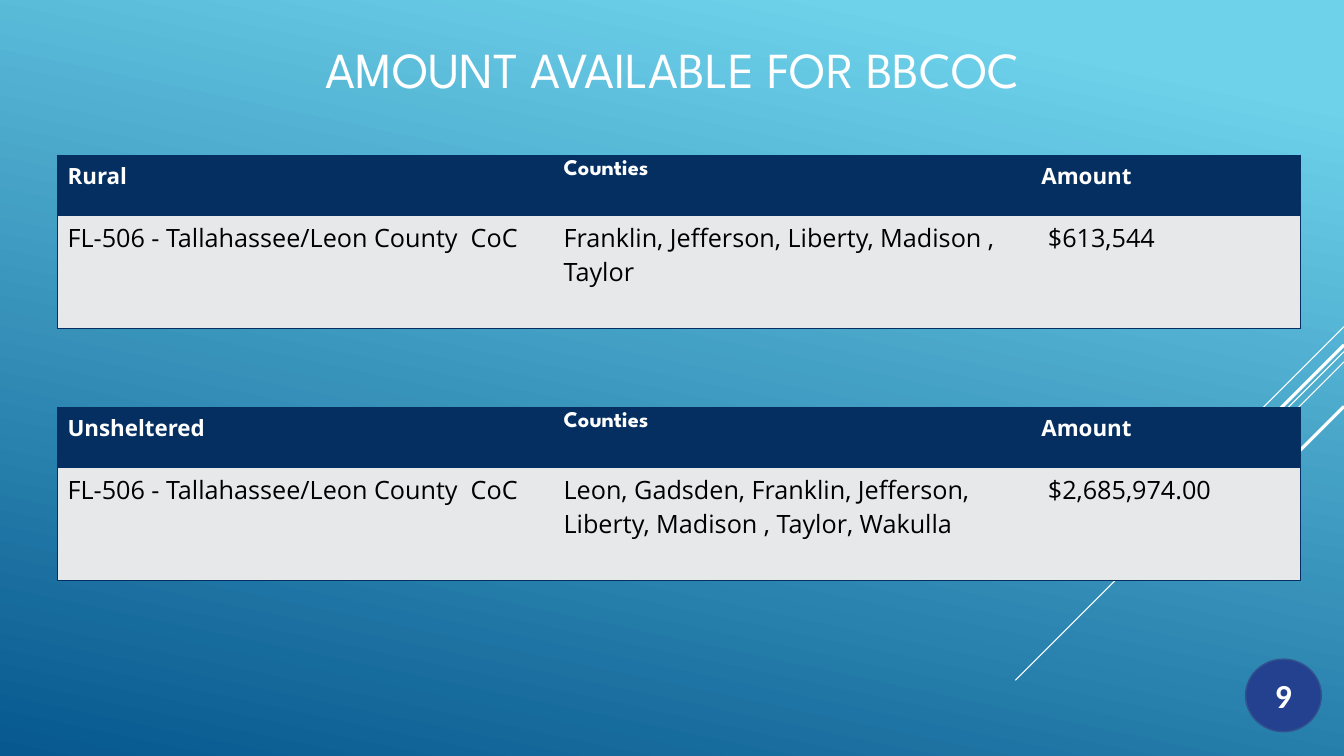
"""Build the slide of funding amounts available for BBCOC."""
import pptx
import pptx.dml.color
import pptx.enum.shapes
import pptx.enum.text
import pptx.oxml
import pptx.oxml.ns
import pptx.util

Cm = pptx.util.Cm
Pt = pptx.util.Pt
WIDE, HIGH = 33.87, 19.05


def paint(code):
    return pptx.dml.color.RGBColor.from_string(code)


class Deck:
    navy, pale, white, black = "052F61", "E7E8EA", "FFFFFF", "000000"
    head, body = "League Spartan", "Open Sans"
    left, cols, rows = 1.45, (12.5, 12.04, 6.78), (1.52, 2.84)

    def __init__(self):
        self.file = pptx.Presentation()
        self.file.slide_width, self.file.slide_height = Cm(WIDE), Cm(HIGH)
        self.slide = self.file.slides.add_slide(self.file.slide_layouts[6])
        self.items = self.slide.shapes

    def back(self, stops, angle):
        fill = self.slide.background.fill
        fill.gradient()
        fill.gradient_angle = angle
        for stop, (place, code) in zip(fill.gradient_stops, stops):
            stop.position = place
            stop.color.rgb = paint(code)

    def label(self, frame, text, size, font, code, bold=False, center=False):
        para = frame.paragraphs[0]
        if center:
            para.alignment = pptx.enum.text.PP_ALIGN.CENTER
        run = para.add_run()
        run.text = text
        run.font.size, run.font.name, run.font.bold = Pt(size), font, bold
        run.font.color.rgb = paint(code)
        return para

    def title(self, text, box):
        frame = self.items.add_textbox(*map(Cm, box)).text_frame
        frame.word_wrap = True
        frame.vertical_anchor = pptx.enum.text.MSO_ANCHOR.MIDDLE
        para = self.label(frame, text, 36, self.head, self.white, center=True)
        para.line_spacing = 0.9

    def ray(self, top, run, width):
        line = self.items.add_connector(
            pptx.enum.shapes.MSO_CONNECTOR.STRAIGHT,
            Cm(WIDE), Cm(top), Cm(WIDE - run), Cm(top + run))
        line.line.color.rgb = paint(self.white)
        line.line.width = Pt(width)
        props = line._element.spPr
        props.append(pptx.oxml.parse_xml(
            f'<a:effectLst {pptx.oxml.ns.nsdecls("a")}/>'))

    def badge(self, text, box):
        disc = self.items.add_shape(
            pptx.enum.shapes.MSO_SHAPE.OVAL, *map(Cm, box))
        disc.shadow.inherit = False
        disc.fill.solid()
        disc.fill.fore_color.rgb = paint("244190")
        disc.line.color.rgb = paint("31538F")
        disc.line.width = Pt(1)
        disc.text_frame.vertical_anchor = pptx.enum.text.MSO_ANCHOR.MIDDLE
        self.label(disc.text_frame, text, 24, "Calibri", self.white, True, True)

    def edge(self, cell, sides):
        props = cell._tc.get_or_add_tcPr()
        for side in "LRTB":
            fill = "<a:noFill/>"
            if side in sides:
                fill = (f'<a:solidFill><a:srgbClr val="{self.navy}"/>'
                        '</a:solidFill>')
            props.append(pptx.oxml.parse_xml(
                f'<a:ln{side} {pptx.oxml.ns.nsdecls("a")} w="{Pt(1)}">'
                f'{fill}</a:ln{side}>'))

    def table(self, top, data):
        grid = self.items.add_table(
            len(self.rows), len(self.cols), Cm(self.left), Cm(top),
            Cm(sum(self.cols)), Cm(sum(self.rows))).table
        for col, width in zip(grid.columns, self.cols):
            col.width = Cm(width)
        last = len(self.cols) - 1
        for r, line in enumerate(data):
            grid.rows[r].height = Cm(self.rows[r])
            for c, text in enumerate(line):
                cell = grid.cell(r, c)
                self.edge(cell, "TB" + "L" * (c == 0) + "R" * (c == last))
                cell.fill.solid()
                cell.fill.fore_color.rgb = paint(self.pale if r else self.navy)
                if r:
                    look = 18, self.body, self.black
                else:
                    font = self.head if c == 1 else self.body
                    look = 16, font, self.white, True
                self.label(cell.text_frame, text, *look)


def main():
    deck = Deck()
    deck.back([(0.1, "6ED2EB"), (1, "06588E")], 258)
    for ray in ((8.23, 2.54, 0.75), (8.86, 8.28, 0.75), (9.12, 5.27, 0.75),
                (8.69, 4.85, 2.25), (10.24, 3.53, 2.25)):
        deck.ray(*ray)
    deck.title("AMOUNT AVAILABLE FOR BBCOC ", (1.45, -0.28, 31.32, 4.19))
    deck.badge("9", (31.39, 16.61, 1.91, 1.83))
    area = "FL-506 - Tallahassee/Leon County  CoC"
    for top, kind, places, amount in (
            (3.91, "Rural", "Franklin, Jefferson, Liberty, Madison , Taylor",
             " $613,544"),
            (10.26, "Unsheltered",
             "Leon, Gadsden, Franklin, Jefferson, Liberty, Madison , "
             "Taylor, Wakulla", " $2,685,974.00")):
        deck.table(top, [(kind, "Counties", "Amount"), (area, places, amount)])
    deck.file.save("out.pptx")


if __name__ == "__main__":
    main()
